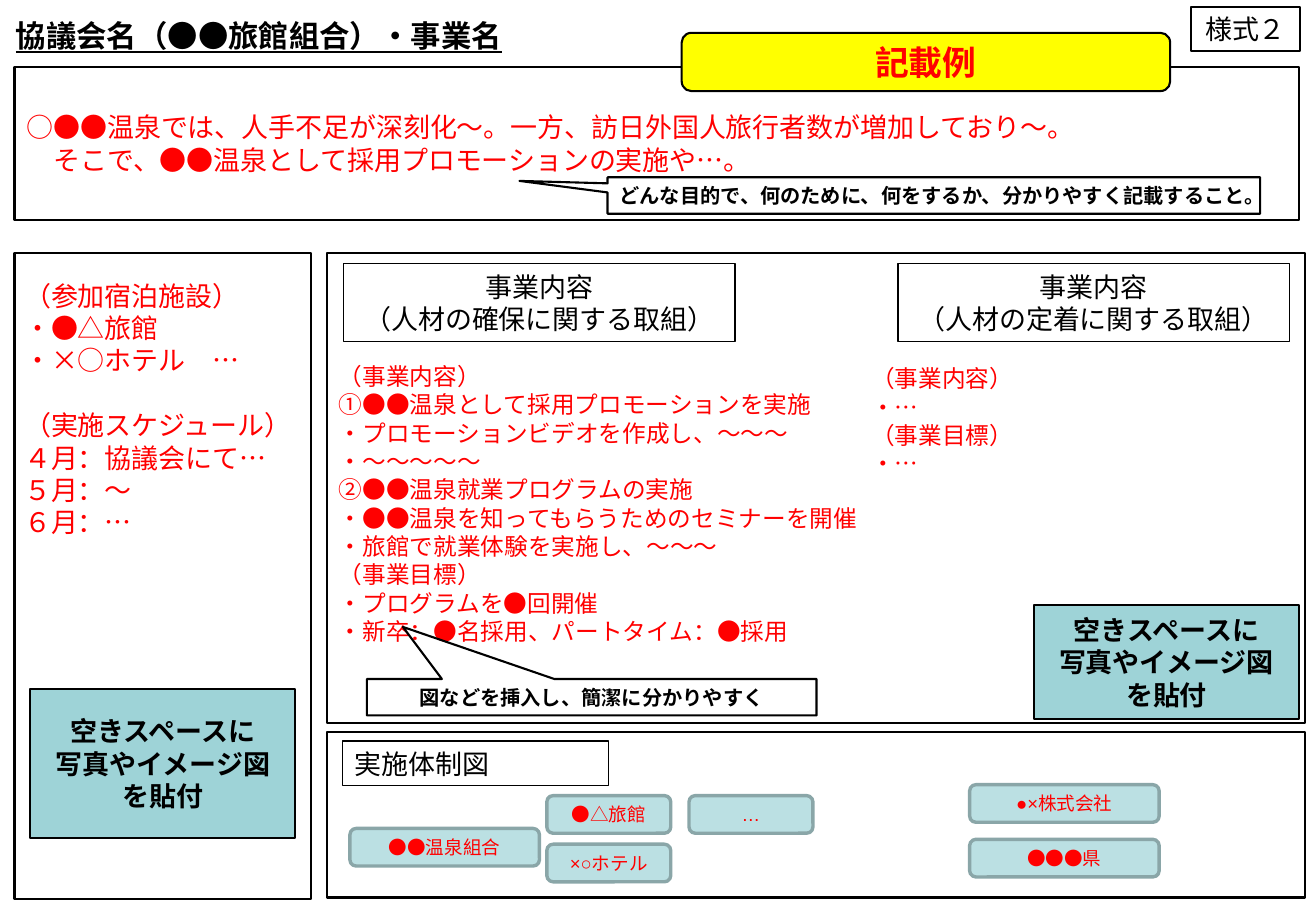
from lxml import etree
from pptx import Presentation
from pptx.dml.color import RGBColor
from pptx.enum.shapes import MSO_SHAPE
from pptx.enum.text import MSO_ANCHOR, PP_ALIGN
from pptx.oxml.ns import qn
from pptx.util import Pt

PX = 9144  # 100 px to the inch
RECT, ROUND = MSO_SHAPE.RECTANGLE, MSO_SHAPE.ROUNDED_RECTANGLE
CALL = MSO_SHAPE.RECTANGULAR_CALLOUT
LEFT, MID = PP_ALIGN.LEFT, PP_ALIGN.CENTER
TOP, MIDDLE = MSO_ANCHOR.TOP, MSO_ANCHOR.MIDDLE
BLACK = RGBColor(0x00, 0x00, 0x00)
WHITE = RGBColor(0xFF, 0xFF, 0xFF)
RED = RGBColor(0xFF, 0x00, 0x00)
YELLOW = RGBColor(0xFF, 0xFF, 0x00)
TEAL = RGBColor(0x9E, 0xD3, 0xD7)
PALE = RGBColor(0xBB, 0xE0, 0xE3)
GRAY = RGBColor(0x8A, 0xA6, 0xA8)
SANS, ARIAL = "Noto Sans CJK JP", "Arial"
PITCH = 1.2  # line height per point of text size


def write(shape, text, size, color, bold=False, align=LEFT, anchor=MIDDLE, face=SANS):
    frame = shape.text_frame
    frame.word_wrap = True
    frame.vertical_anchor = anchor
    frame.text = text
    for para in frame.paragraphs:
        para.alignment = align
        para.line_spacing = Pt(size * PITCH)
        for run in para.runs:
            font = run.font
            font.name, font.size, font.bold = face, Pt(size), bold
            font.color.rgb = color
            east = etree.SubElement(run._r.get_or_add_rPr(), qn("a:ea"))
            east.set("typeface", SANS)


def box(kind, place, fill, line=BLACK, width=1.25):
    shape = slide.shapes.add_shape(kind, *[n * PX for n in place])
    shape.shadow.inherit = False
    if fill is None:
        shape.fill.background()
    else:
        shape.fill.solid()
        shape.fill.fore_color.rgb = fill
    shape.line.color.rgb = line
    shape.line.width = Pt(width)
    return shape


deck = Presentation()
deck.slide_width, deck.slide_height = 1083 * PX, 750 * PX
slide = deck.slides.add_slide(deck.slide_layouts[5])

title = slide.shapes.title
title.left, title.top, title.width, title.height = [n * PX for n in (3, 3, 951, 52)]
write(title, "協議会名（●●旅館組合）・事業名", 18, BLACK, True)
title.text_frame.paragraphs[0].runs[0].font.underline = True

# Frames
lead = box(RECT, (12, 55, 1057, 126), WHITE)
write(lead, "○●●温泉では、人手不足が深刻化～。一方、訪日外国人旅行者数が増加しており～。\n"
      "　そこで、●●温泉として採用プロモーションの実施や…。", 16, RED)
box(RECT, (12, 208, 244, 532), WHITE)
for top, high in ((603, 136), (208, 387)):
    box(RECT, (269, top, 805, high), None)

form = box(RECT, (980, 6, 90, 36), WHITE)
write(form, "様式２", 16, BLACK, align=MID, face=ARIAL)

# Headings
heads = [
    ((283, 217, 322, 64), "事業内容\n（人材の確保に関する取組）", MID),
    ((739, 217, 322, 64), "事業内容\n（人材の定着に関する取組）", MID),
    ((282, 610, 219, 37), "実施体制図", LEFT),
]
for place, text, align in heads:
    write(box(RECT, place, WHITE, width=0.75), text, 16, BLACK, align=align)

# Body text
bodies = [
    ((10, 225, 285, 252), 16,
     "（参加宿泊施設）\n・●△旅館\n・×○ホテル　…\n"
     "（実施スケジュール）\n４月：協議会にて…\n５月：～\n６月：…"),
    ((269, 293, 469, 246), 14,
     "（事業内容）\n①●●温泉として採用プロモーションを実施\n"
     "・プロモーションビデオを作成し、～～～\n・～～～～～\n"
     "②●●温泉就業プログラムの実施\n"
     "・●●温泉を知ってもらうためのセミナーを開催\n"
     "・旅館で就業体験を実施し、～～～\n（事業目標）\n"
     "・プログラムを●回開催\n・新卒：●名採用、パートタイム：●採用"),
    ((707, 295, 469, 104), 14, "（事業内容）\n・…\n（事業目標）\n・…"),
]
for place, size, text in bodies:
    body = slide.shapes.add_textbox(*[n * PX for n in place])
    write(body, text, size, RED, anchor=TOP)
    for para in body.text_frame.paragraphs:
        if para.text == "（実施スケジュール）":
            para.space_before = Pt(size * PITCH)

# Space for pictures
for place in ((25, 567, 218, 123), (851, 498, 218, 94)):
    write(box(RECT, place, TEAL), "空きスペースに\n写真やイメージ図を貼付", 16, BLACK, True, MID)

# Callouts
calls = [
    ((500, 146, 537, 30), (-0.635, -0.4), LEFT,
     "どんな目的で、何のために、何をするか、分かりやすく記載すること。"),
    ((302, 559, 370, 30), (-0.42, -1.93), MID, "図などを挿入し、簡潔に分かりやすく"),
]
for place, tip, align, text in calls:
    call = box(CALL, place, None)
    call.adjustments[0], call.adjustments[1] = tip
    write(call, text, 12, BLACK, True, align)
    if align == LEFT:
        call.text_frame.margin_right = 0

write(box(ROUND, (561, 27, 402, 48), YELLOW), "記載例", 20, RED, True, MID)

# Members
members = [
    (288, 682, 156, "●●温泉組合"),
    (450, 655, 102, "●△旅館"),
    (450, 695, 102, "×○ホテル"),
    (567, 655, 102, "…"),
    (798, 646, 156, "●×株式会社"),
    (798, 691, 156, "●●●県"),
]
for left, top, wide, text in members:
    node = box(ROUND, (left, top, wide, 31), PALE, GRAY, 2)
    write(node, text, 11, RED, align=MID, face=ARIAL)

deck.save("out.pptx")
